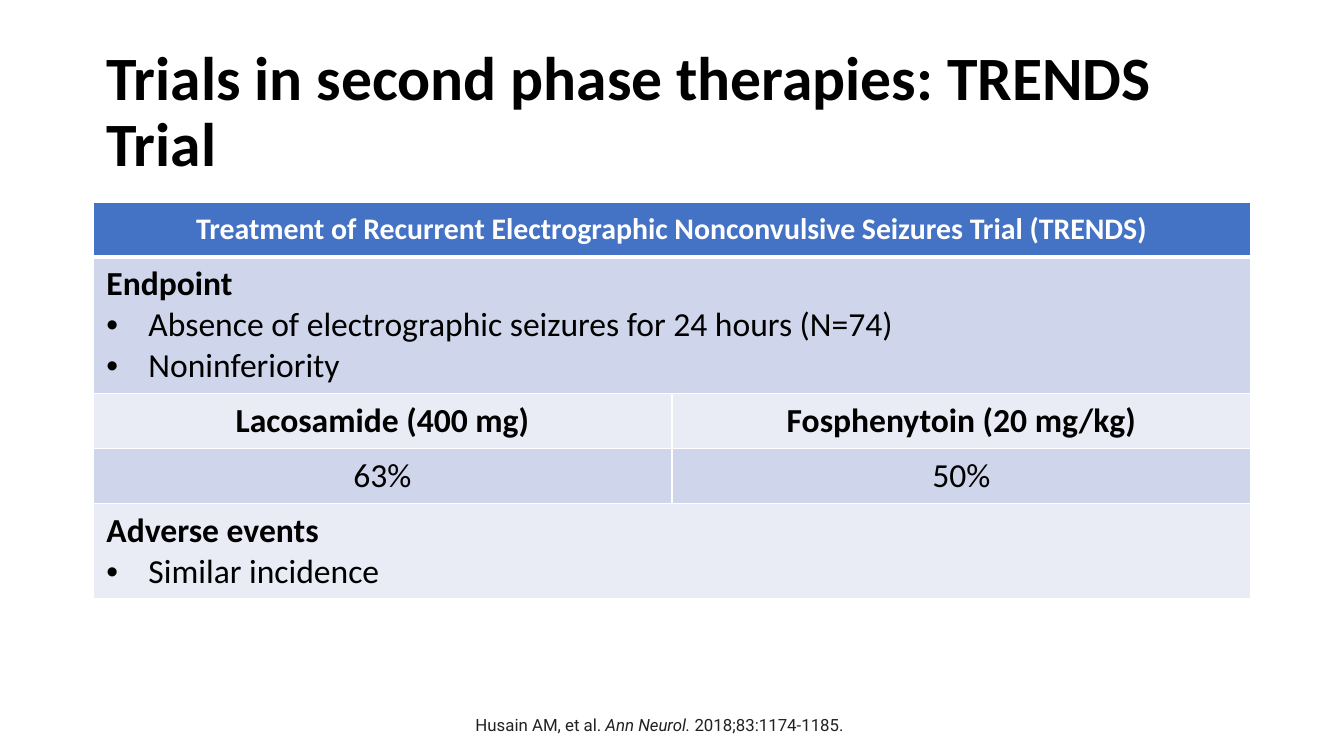
"""Build the TRENDS trial slide with its results table and citation."""
from lxml import etree
from pptx import Presentation
from pptx.dml.color import RGBColor
from pptx.enum.text import MSO_ANCHOR, MSO_AUTO_SIZE, PP_ALIGN
from pptx.oxml.ns import qn
from pptx.util import Pt

LEFT, CENTER = PP_ALIGN.LEFT, PP_ALIGN.CENTER
MIDDLE, BOTTOM = MSO_ANCHOR.MIDDLE, MSO_ANCHOR.BOTTOM
NO_FIT = MSO_AUTO_SIZE.NONE
BLACK = RGBColor(0x00, 0x00, 0x00)
WHITE = RGBColor(0xFF, 0xFF, 0xFF)
INK = RGBColor(0x21, 0x21, 0x21)
BLUE = RGBColor(0x44, 0x72, 0xC4)
BAND_DARK = RGBColor(0xCF, 0xD5, 0xEA)
BAND_LIGHT = RGBColor(0xE9, 0xEB, 0xF5)
PX = 914400 / 134.4


def px(length):
    return round(length * PX)


def write(paragraph, text, size=18, color=BLACK, font="Calibri", bold=False,
          italic=False, align=LEFT, bullet=None, indent=0):
    paragraph.alignment = align
    properties = paragraph._p.get_or_add_pPr()
    properties.set("marL", str(px(indent)))
    properties.set("indent", str(px(-indent)))
    if properties.find(qn("a:buNone")) is None and not bullet:
        etree.SubElement(properties, qn("a:buNone"))
    if bullet:
        etree.SubElement(properties, qn("a:buFont"), typeface="Arial")
        etree.SubElement(properties, qn("a:buChar"), char=bullet)
    span = paragraph.add_run()
    span.text = text
    span.font.size = Pt(size)
    span.font.name = font
    span.font.bold = bold
    span.font.italic = italic
    span.font.color.rgb = color


deck = Presentation()
deck.slide_width, deck.slide_height = px(1344), px(756)
page = deck.slides.add_slide(deck.slide_layouts[1])
title, citation = page.placeholders

for box, bounds, anchor in (
    (title, (93, 40, 1158, 147), MIDDLE),
    (citation, (462, 667, 790, 75), BOTTOM),
):
    box.left, box.top, box.width, box.height = map(px, bounds)
    box.text_frame.word_wrap = True
    box.text_frame.auto_size = NO_FIT
    box.text_frame.vertical_anchor = anchor

heading = title.text_frame.paragraphs[0]
heading.line_spacing = 0.9
write(heading, "Trials in second phase therapies: TRENDS Trial", size=33, bold=True)

reference = citation.text_frame.paragraphs[0]
reference.space_before = Pt(0)
for text, italic in (
    ("Husain AM, et al. ", False),
    ("Ann Neurol. ", True),
    ("2018;83:1174-1185.", False),
):
    write(reference, text, size=9, color=INK, font="Roboto", italic=italic)

head = {"size": 16, "color": WHITE, "bold": True, "align": CENTER}
label = {"bold": True}
item = {"bullet": "•", "indent": 42}
drug = {"bold": True, "align": CENTER}
rate = {"align": CENTER}
rows = [
    (55, BLUE, [[("Treatment of Recurrent Electrographic Nonconvulsive Seizures Trial (TRENDS)", head)]]),
    (136, BAND_DARK, [[
        ("Endpoint", label),
        ("Absence of electrographic seizures for 24 hours (N=74)", item),
        ("Noninferiority", item),
    ]]),
    (55, BAND_LIGHT, [[("Lacosamide (400 mg)", drug)], [("Fosphenytoin (20 mg/kg)", drug)]]),
    (55, BAND_DARK, [[("63%", rate)], [("50%", rate)]]),
    (94, BAND_LIGHT, [[("Adverse events", label), ("Similar incidence", item)]]),
]
table_height = sum(height for height, fill, cells in rows)
table = page.shapes.add_table(len(rows), 2, px(93), px(202), px(1158), px(table_height)).table

for row, (height, fill, cells) in enumerate(rows):
    table.rows[row].height = px(height)
    for column in range(2):
        cell = table.cell(row, column)
        cell.vertical_anchor = MIDDLE
        for side in "LRTB":
            thick = (row, side) in ((0, "B"), (1, "T"))
            border = etree.SubElement(cell._tc.get_or_add_tcPr(), qn(f"a:ln{side}"),
                                      w=str(Pt(3 if thick else 1)))
            paint = etree.SubElement(border, qn("a:solidFill"))
            etree.SubElement(paint, qn("a:srgbClr"), val=str(WHITE))
        cell.fill.solid()
        cell.fill.fore_color.rgb = fill
    if len(cells) == 1:
        table.cell(row, 0).merge(table.cell(row, 1))
    for column, lines in enumerate(cells):
        frame = table.cell(row, column).text_frame
        for number, (text, style) in enumerate(lines):
            paragraph = frame.add_paragraph() if number else frame.paragraphs[0]
            write(paragraph, text, **style)

deck.save("out.pptx")
